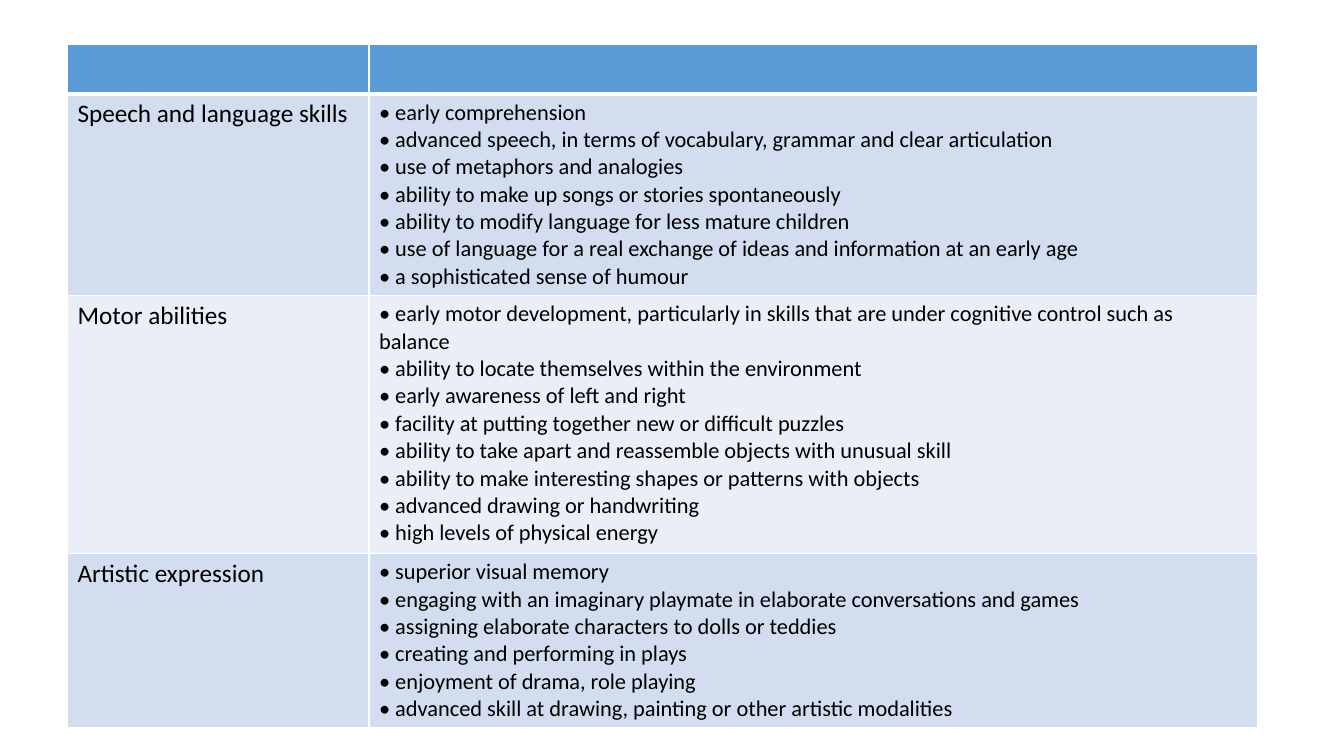
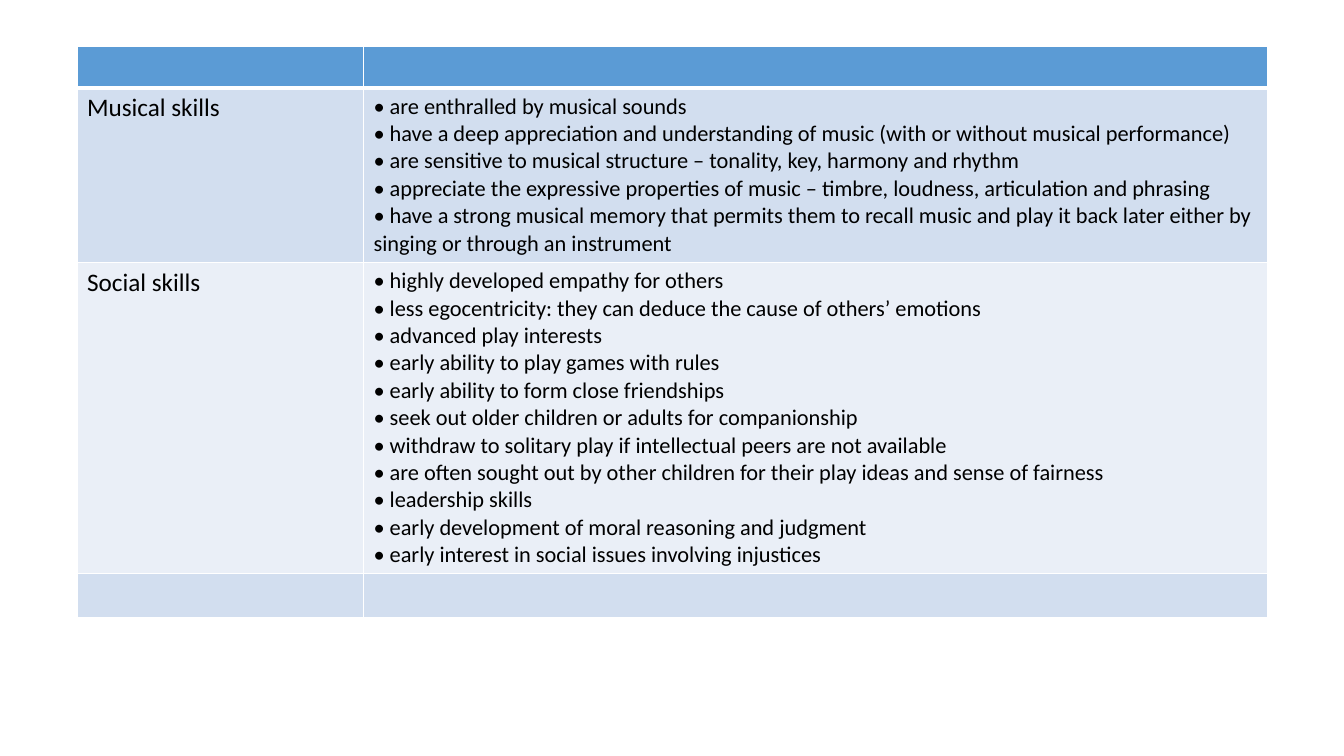
"""Build two slides of tables listing traits by area of ability."""
from lxml import etree
from pptx import Presentation
from pptx.dml.color import RGBColor
from pptx.oxml.ns import qn
from pptx.util import Cm, Pt

HEADER_BLUE = RGBColor(0x5B, 0x9B, 0xD5)
BAND_DARK = RGBColor(0xD2, 0xDE, 0xEF)
BAND_LIGHT = RGBColor(0xEA, 0xEF, 0xF7)
BLACK = RGBColor(0, 0, 0)
WHITE = RGBColor(0xFF, 0xFF, 0xFF)
FONT = "Calibri"
AREA_SIZE = Pt(18)
TRAIT_SIZE = Pt(16)
THIN = Pt(1)
THICK = Pt(3)

FIRST_AREAS = [
    ("Speech and language skills", [
        "early comprehension",
        "advanced speech, in terms of vocabulary, grammar and clear articulation",
        "use of metaphors and analogies",
        "ability to make up songs or stories spontaneously",
        "ability to modify language for less mature children",
        "use of language for a real exchange of ideas and information at an early age",
        "a sophisticated sense of humour",
    ]),
    ("Motor abilities", [
        "early motor development, particularly in skills that are under cognitive "
        "control such as balance",
        "ability to locate themselves within the environment",
        "early awareness of left and right",
        "facility at putting together new or difficult puzzles",
        "ability to take apart and reassemble objects with unusual skill",
        "ability to make interesting shapes or patterns with objects",
        "advanced drawing or handwriting",
        "high levels of physical energy",
    ]),
    ("Artistic expression", [
        "superior visual memory",
        "engaging with an imaginary playmate in elaborate conversations and games",
        "assigning elaborate characters to dolls or teddies",
        "creating and performing in plays",
        "enjoyment of drama, role playing",
        "advanced skill at drawing, painting or other artistic modalities",
    ]),
]
SECOND_AREAS = [
    ("Musical skills", [
        "are enthralled by musical sounds",
        "have a deep appreciation and understanding of music "
        "(with or without musical performance)",
        "are sensitive to musical structure – tonality, key, harmony and rhythm",
        "appreciate the expressive properties of music – timbre, loudness, "
        "articulation and phrasing",
        "have a strong musical memory that permits them to recall music and play it "
        "back later either by singing or through an instrument",
    ]),
    ("Social skills", [
        "highly developed empathy for others",
        "less egocentricity: they can deduce the cause of others’ emotions",
        "advanced play interests",
        "early ability to play games with rules",
        "early ability to form close friendships",
        "seek out older children or adults for companionship",
        "withdraw to solitary play if intellectual peers are not available",
        "are often sought out by other children for their play ideas and sense of fairness",
        "leadership skills",
        "early development of moral reasoning and judgment",
        "early interest in social issues involving injustices",
    ]),
    ("", []),
]


def set_borders(cell, top, bottom):
    """Draw white borders, with the given top and bottom widths."""
    properties = cell._tc.get_or_add_tcPr()
    widths = {"lnL": THIN, "lnR": THIN, "lnT": top, "lnB": bottom}
    for position, (side, width) in enumerate(widths.items()):
        border = etree.Element(qn(f"a:{side}"), w=str(int(width)))
        fill = etree.SubElement(border, qn("a:solidFill"))
        etree.SubElement(fill, qn("a:srgbClr"), val=str(WHITE))
        properties.insert(position, border)


def write_cell(cell, lines, size):
    """Write one paragraph per line in the table font."""
    cell.text = "\n".join(lines)
    for paragraph in cell.text_frame.paragraphs:
        paragraph.font.name = FONT
        paragraph.font.size = size
        paragraph.font.color.rgb = BLACK


def style_row(row, index):
    """Fill a row and rule it, with a thick line under the header."""
    if index == 0:
        color = HEADER_BLUE
    else:
        color = BAND_DARK if index % 2 else BAND_LIGHT
    for cell in row.cells:
        cell.fill.solid()
        cell.fill.fore_color.rgb = color
        set_borders(cell, THICK if index == 1 else THIN, THICK if index == 0 else THIN)


def add_trait_slide(deck, areas, left, top, widths, heights):
    """Add a slide with an empty header row and one row per area."""
    slide = deck.slides.add_slide(deck.slide_layouts[6])
    table = slide.shapes.add_table(
        len(heights), len(widths), Cm(left), Cm(top), Cm(sum(widths)), Cm(sum(heights))
    ).table
    for column, width in zip(table.columns, widths):
        column.width = Cm(width)
    for index, (row, height) in enumerate(zip(table.rows, heights)):
        row.height = Cm(height)
        style_row(row, index)
    for index, (area, traits) in enumerate(areas, start=1):
        if area:
            write_cell(table.cell(index, 0), [area], AREA_SIZE)
            write_cell(table.cell(index, 1), [f"• {trait}" for trait in traits], TRAIT_SIZE)


def main():
    """Build and save the deck."""
    deck = Presentation()
    deck.slide_width = Cm(33.87)
    deck.slide_height = Cm(19.05)
    add_trait_slide(deck, FIRST_AREAS, 1.7, 1.12, (7.6, 22.4), (1.24, 5.08, 6.5, 4.4))
    add_trait_slide(deck, SECOND_AREAS, 1.94, 1.17, (7.22, 22.78), (1.04, 4.4, 7.85, 1.09))
    deck.save("out.pptx")


if __name__ == "__main__":
    main()
